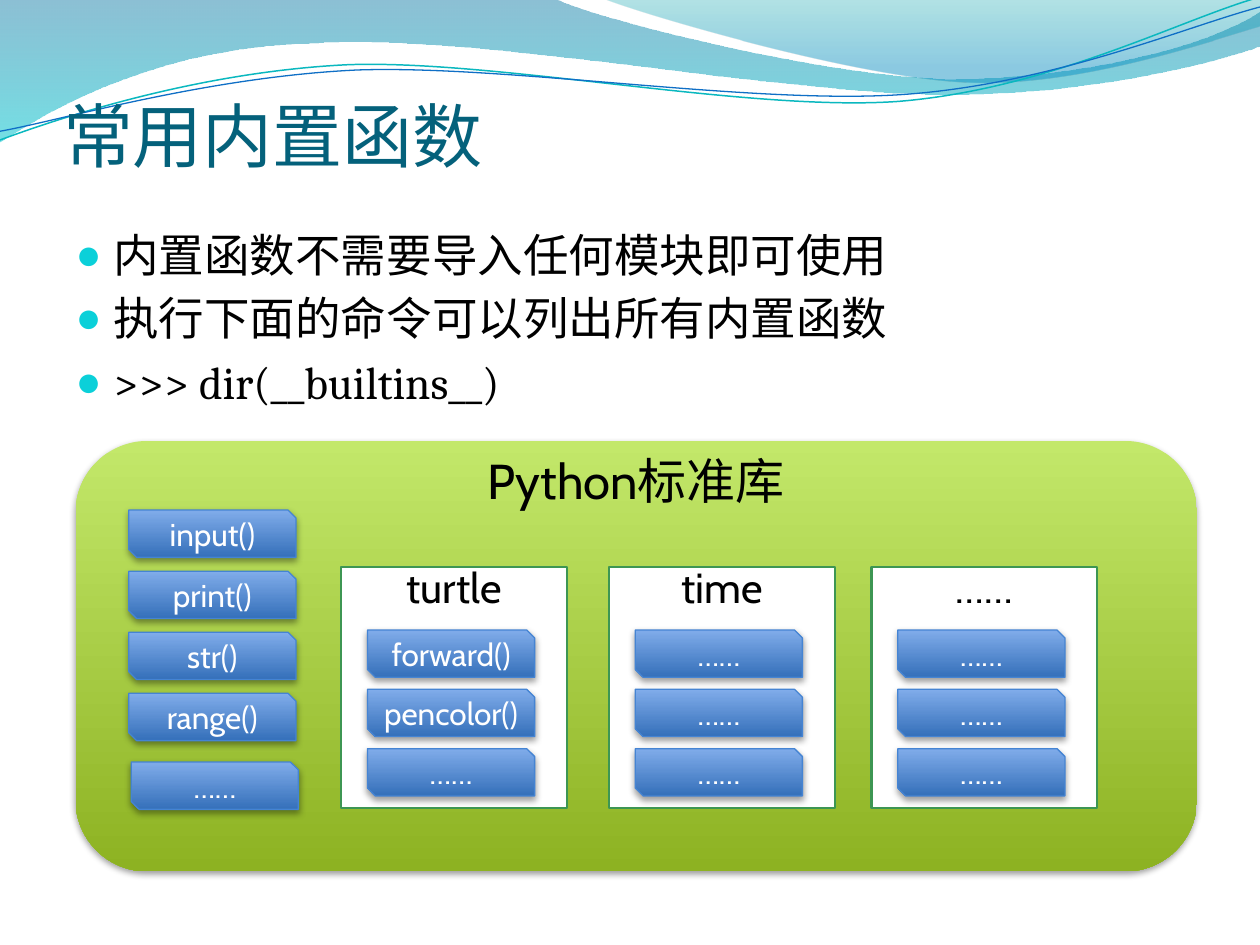
from lxml import etree
from pptx import Presentation
from pptx.dml.color import RGBColor
from pptx.enum.shapes import MSO_SHAPE
from pptx.enum.text import MSO_ANCHOR, PP_ALIGN
from pptx.oxml.ns import qn
from pptx.util import Pt

ROUNDED = MSO_SHAPE.ROUNDED_RECTANGLE
RECTANGLE = MSO_SHAPE.RECTANGLE
SNIPPED = MSO_SHAPE.SNIP_2_DIAG_RECTANGLE
TOP, MIDDLE = MSO_ANCHOR.TOP, MSO_ANCHOR.MIDDLE
LEFT, CENTER = PP_ALIGN.LEFT, PP_ALIGN.CENTER

BUTTON_WIDTH, BUTTON_HEIGHT = 95.5, 27

# Each path is a start point, then line ends (2 numbers) or Bezier curves (6).
# Filled waves add two gradient stops: position, colour, opacity in percent.
WAVES = [
    ([(-0.7, 0), (317, -0.7), (343, 12, 478, 45, 546, 45), (614, 45, 690, 27, 720, 6.5),
      (720.7, 26), (708, 32, 626, 55, 537, 54), (448, 54, 275, 20, 185, 24.5),
      (93, 26, 33, 60, -0.7, 81.4)],
     [(0, "0074A1", 45), (1, "00C6CF", 55)]),
    ([(345, -0.7), (366, 8, 491, 45, 554, 47), (617, 49.5, 692, 23, 720, 15), (720, 0)],
     [(0, "00A1A9", 30), (0.8, "008BBF", 45)]),
]
WAVE_LINES = [
    ([(0, 80), (35, 67, 114, 41, 199, 37), (284, 34, 427, 64, 513, 58),
      (600, 51, 675, 11, 719, -1.4)], "0AB8BF", 0.85),
    ([(0, 75), (34, 69, 118, 44, 204, 40), (290, 37, 430, 60, 516, 54),
      (602, 48, 678, 15, 720, 4)], "0F6FC6", 0.75),
]
BULLETS = ["内置函数不需要导入任何模块即可使用",
           "执行下面的命令可以列出所有内置函数",
           ">>> dir(__builtins__)"]
BUILTINS = ["input()", "print()", "str()", "range()"]
MODULES = [(195, "turtle", ["forward()", "pencolor()", "……"]),
           (348, "time", ["……"] * 3),
           (498, "……", ["……"] * 3)]


def color(hex_value):
    return RGBColor.from_string(hex_value)


def add_element(parent, tag, **attributes):
    child = etree.SubElement(parent, qn(tag))
    for name, value in attributes.items():
        child.set(name, str(value))
    return child


def set_font(para, name, size, hex_value):
    para.font.name = name
    para.font.size = Pt(size)
    para.font.color.rgb = color(hex_value)


def set_line(shape, hex_value, width):
    shape.line.color.rgb = color(hex_value)
    shape.line.width = Pt(width)


def fill_gradient(shape, stops):
    """Fill from top to bottom with (position, colour, opacity) stops."""
    shape.fill.gradient()
    shape.fill.gradient_angle = 270
    for stop, (position, hex_value, _) in zip(shape.fill.gradient_stops, stops):
        stop.position = position
        stop.color.rgb = color(hex_value)
    tones = shape._element.spPr.find(qn("a:gradFill")).iter(qn("a:srgbClr"))
    for tone, (_, _, opacity) in zip(tones, stops):
        if opacity < 100:
            add_element(tone, "a:alpha", val=opacity * 1000)


def add_soft_shadow(shape):
    effects = shape._element.spPr.find(qn("a:effectLst"))
    shadow = add_element(effects, "a:outerShdw", blurRad=Pt(4), dist=Pt(2),
                         dir=90 * 60000, rotWithShape=0)
    tone = add_element(shadow, "a:srgbClr", val="000000")
    add_element(tone, "a:alpha", val=38000)


def add_path(shapes, segments, close):
    """Build the outline with straight sides, then bend those that are curves."""
    ends = [(Pt(segment[-2]), Pt(segment[-1])) for segment in segments]
    builder = shapes.build_freeform(*ends[0], scale=1.0)
    builder.add_line_segments(ends[1:], close=close)
    path = builder.convert_to_shape()
    path.shadow.inherit = False
    sides = list(path._element.iter(qn("a:lnTo")))
    for side, segment in zip(sides, segments[1:]):
        if len(segment) == 6:
            curve = etree.Element(qn("a:cubicBezTo"))
            for x, y in zip(segment[::2], segment[1::2]):
                add_element(curve, "a:pt", x=Pt(x) - path.left, y=Pt(y) - path.top)
            side.getparent().replace(side, curve)
    return path


def add_waves(page):
    """Draw the header waves behind the placeholders."""
    waves = []
    for segments, stops in WAVES:
        wave = add_path(page.shapes, segments, True)
        fill_gradient(wave, stops)
        wave.line.fill.background()
        waves.append(wave)
    for segments, hex_value, width in WAVE_LINES:
        wave = add_path(page.shapes, segments, False)
        wave.fill.background()
        set_line(wave, hex_value, width)
        waves.append(wave)
    for wave in waves:
        page.shapes.title._element.addprevious(wave._element)


def place(shape, left, top, width, height):
    shape.left, shape.top = Pt(left), Pt(top)
    shape.width, shape.height = Pt(width), Pt(height)


def fill_title(title):
    place(title, 36, 30, 648, 90)
    frame = title.text_frame
    frame.text = "常用内置函数"
    frame.vertical_anchor = MIDDLE
    frame.margin_left = frame.margin_right = frame.margin_bottom = 0
    frame.paragraphs[0].alignment = LEFT
    set_font(frame.paragraphs[0], "Calibri", 40, "04617B")


def fill_body(body):
    place(body, 36, 126, 648, 372)
    body.text_frame.text = "\n".join(BULLETS)
    for para in body.text_frame.paragraphs:
        set_font(para, "Cambria", 26, "000000")
        para.space_before = Pt(5.2)
        properties = para._p.get_or_add_pPr()
        properties.set("marL", str(Pt(21.6)))
        properties.set("indent", str(Pt(-21.6)))
        tone = add_element(properties, "a:buClr")
        add_element(tone, "a:srgbClr", val="0BD0D9")
        add_element(properties, "a:buSzPct", val=95000)
        add_element(properties, "a:buChar", char="●")
        properties.append(properties.find(qn("a:defRPr")))


def add_box(shapes, kind, bounds, text, size, hex_value, anchor=MIDDLE, margin_top=0):
    box = shapes.add_shape(kind, *(Pt(value) for value in bounds))
    box.shadow.inherit = False
    frame = box.text_frame
    frame.text = text
    frame.word_wrap = True
    frame.vertical_anchor = anchor
    frame.margin_left = frame.margin_right = frame.margin_bottom = 0
    frame.margin_top = Pt(margin_top)
    frame.paragraphs[0].alignment = CENTER
    set_font(frame.paragraphs[0], "Cabin", size, hex_value)
    return box


def add_button(shapes, left, top, text):
    bounds = (left, top, BUTTON_WIDTH, BUTTON_HEIGHT)
    button = add_box(shapes, SNIPPED, bounds, text, 18, "FFFFFF")
    fill_gradient(button, [(0, "80ACEA", 100), (1, "3570BA", 100)])
    set_line(button, "4584D3", 0.75)
    add_soft_shadow(button)


def add_module(shapes, left, name, functions):
    module = add_box(shapes, RECTANGLE, (left, 324, 129, 138), name, 24, "000000", TOP, -3)
    module.fill.solid()
    module.fill.fore_color.rgb = color("FFFFFF")
    set_line(module, "3D9653", 1.25)
    for row, function in enumerate(functions):
        add_button(shapes, left + 15, 360 + 33.9 * row, function)


def add_library(shapes):
    panel = add_box(shapes, ROUNDED, (43.2, 252, 640.8, 246), "Python标准库", 28, "000000",
                    TOP, -6.5)
    fill_gradient(panel, [(0, "C3E86A", 100), (1, "8DB222", 100)])
    panel.line.fill.background()
    add_soft_shadow(panel)
    for module in MODULES:
        add_module(shapes, *module)
    for row, function in enumerate(BUILTINS):
        add_button(shapes, 73.6, 291.5 + 34.9 * row, function)
    add_button(shapes, 75, 435.5, "……")


def main():
    deck = Presentation()
    deck.slide_width, deck.slide_height = Pt(720), Pt(540)
    page = deck.slides.add_slide(deck.slide_layouts[1])
    add_waves(page)
    fill_title(page.shapes.title)
    fill_body(page.placeholders[1])
    add_library(page.shapes.add_group_shape().shapes)
    deck.save("out.pptx")


if __name__ == "__main__":
    main()
